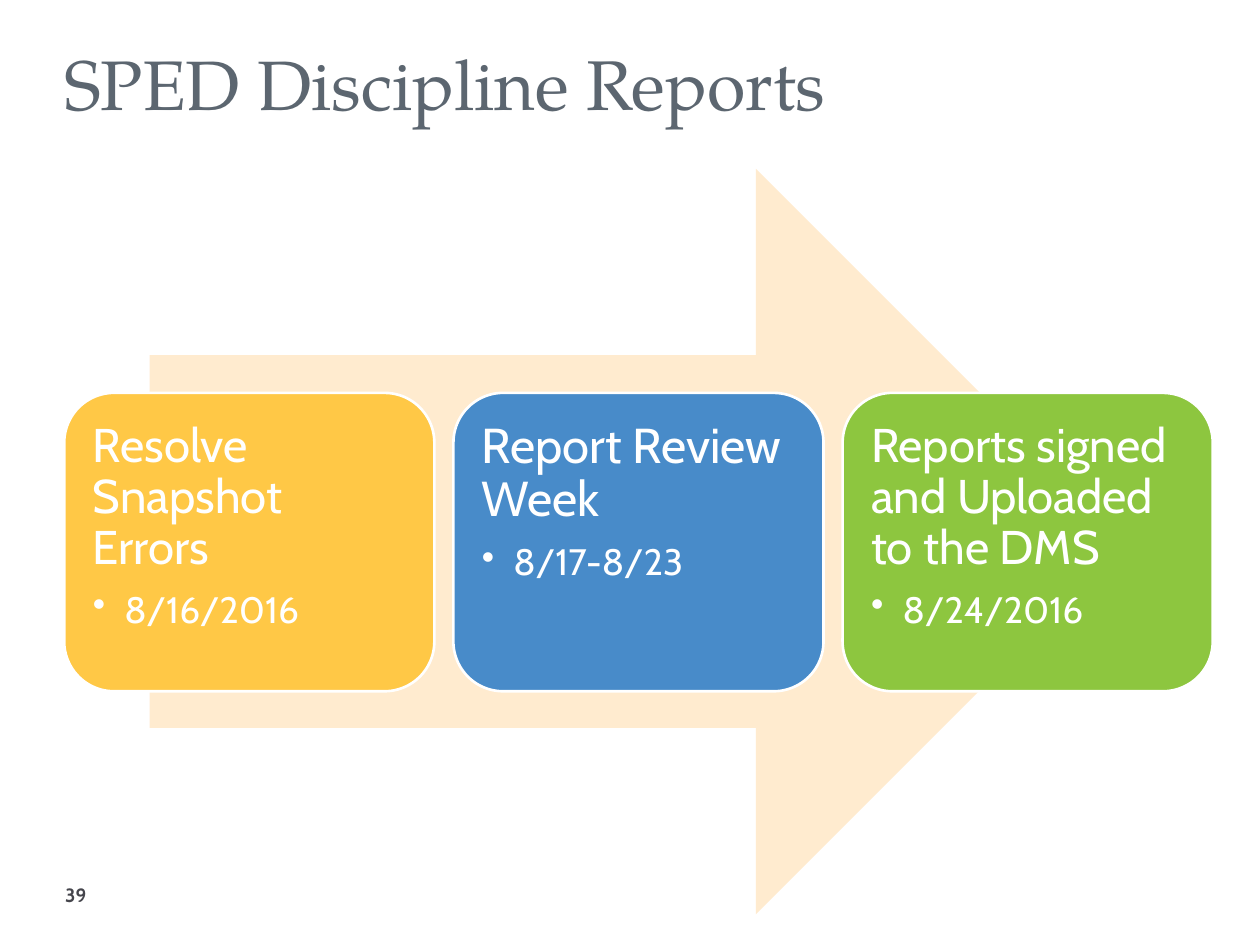
import pptx
import pptx.util
import pptx.dml.color
import pptx.enum.shapes
import pptx.enum.text
import pptx.oxml
import pptx.oxml.ns

Pt = pptx.util.Pt
RGBColor = pptx.dml.color.RGBColor
Shapes = pptx.enum.shapes.MSO_SHAPE
Align = pptx.enum.text.PP_ALIGN
Anchor = pptx.enum.text.MSO_ANCHOR

WHITE = RGBColor(0xFF, 0xFF, 0xFF)
SLATE = RGBColor(0x5C, 0x66, 0x70)
CHARCOAL = RGBColor(0x45, 0x45, 0x4C)
CREAM = RGBColor(0xFF, 0xEB, 0xCF)
YELLOW = RGBColor(0xFF, 0xC8, 0x46)
BLUE = RGBColor(0x48, 0x8B, 0xC9)
GREEN = RGBColor(0x8D, 0xC6, 0x3F)

TITLE_FONT = "TeX Gyre Pagella"
BODY_FONT = "Cabin"

STEP_LEFT = 36.7
STEP_PITCH = 222.4
STEPS = [
    ("Resolve Snapshot Errors", "8/16/2016", YELLOW, 27),
    ("Report Review \vWeek", "8/17-8/23", BLUE, 28),
    ("Reports signed and Uploaded to the DMS", "8/24/2016", GREEN, 27),
]


def style_font(paragraph, name, size, color):
    paragraph.font.name = name
    paragraph.font.size = Pt(size)
    paragraph.font.color.rgb = color


def add_bullet(paragraph):
    properties = paragraph._p.get_or_add_pPr()
    properties.set("marL", str(Pt(18)))
    properties.set("indent", str(-Pt(18)))
    namespace = pptx.oxml.ns.nsdecls("a")
    properties.append(pptx.oxml.parse_xml(f'<a:buChar {namespace} char="•"/>'))


def add_filled_shape(slide, kind, left, top, width, height, color):
    shape = slide.shapes.add_shape(kind, Pt(left), Pt(top), Pt(width), Pt(height))
    shape.shadow.inherit = False
    shape.fill.solid()
    shape.fill.fore_color.rgb = color
    return shape


def set_title(slide, text):
    title = slide.shapes.title
    title.left, title.top, title.width, title.height = Pt(29.5), Pt(19.4), Pt(655), Pt(55.4)
    title.text_frame.text = text
    title.text_frame.vertical_anchor = Anchor.MIDDLE
    paragraph = title.text_frame.paragraphs[0]
    paragraph.alignment = Align.LEFT
    style_font(paragraph, TITLE_FONT, 40, SLATE)


def add_arrow(slide):
    arrow = add_filled_shape(slide, Shapes.RIGHT_ARROW, 85.5, 96.5, 559.5, 426, CREAM)
    arrow.line.fill.background()


def add_step(slide, left, heading, date, color, heading_size):
    shape = add_filled_shape(slide, Shapes.ROUNDED_RECTANGLE, left, 224.5, 211.5, 170.5, color)
    shape.line.color.rgb = WHITE
    shape.line.width = Pt(1.5)
    frame = shape.text_frame
    frame.word_wrap = True
    frame.vertical_anchor = Anchor.TOP
    frame.margin_left = frame.margin_right = Pt(8)
    frame.margin_top = frame.margin_bottom = Pt(8)
    frame.text = heading
    date_paragraph = frame.add_paragraph()
    date_paragraph.text = date
    date_paragraph.level = 1
    add_bullet(date_paragraph)
    for paragraph, size in zip(frame.paragraphs, (heading_size, 21)):
        paragraph.alignment = Align.LEFT
        paragraph.line_spacing = 0.9
        style_font(paragraph, BODY_FONT, size, WHITE)
    frame.paragraphs[0].space_after = Pt(9.5)


def add_page_number(slide, number):
    box = slide.shapes.add_textbox(Pt(30.2), Pt(500.4), Pt(264), Pt(21.6))
    frame = box.text_frame
    frame.word_wrap = True
    frame.vertical_anchor = Anchor.MIDDLE
    frame.text = number
    paragraph = frame.paragraphs[0]
    style_font(paragraph, BODY_FONT, 11, CHARCOAL)
    paragraph.font.bold = True


def main():
    presentation = pptx.Presentation()
    presentation.slide_width = Pt(720)
    presentation.slide_height = Pt(540)
    slide = presentation.slides.add_slide(presentation.slide_layouts[5])
    set_title(slide, "SPED Discipline Reports")
    add_page_number(slide, "39")
    add_arrow(slide)
    for index, step in enumerate(STEPS):
        add_step(slide, STEP_LEFT + index * STEP_PITCH, *step)
    presentation.save("out.pptx")


if __name__ == "__main__":
    main()
